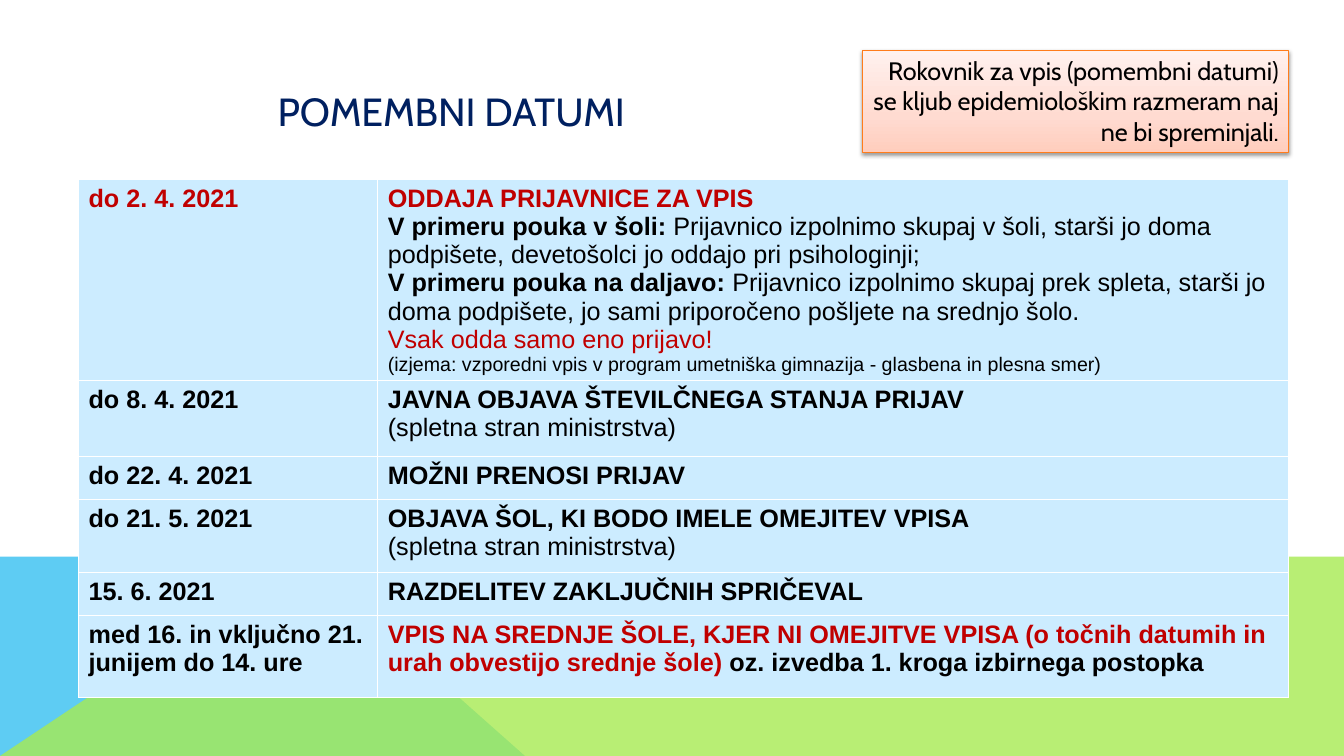
import pptx
import pptx.util
import pptx.dml.color
import pptx.enum.text
import pptx.enum.shapes
import pptx.oxml
import pptx.oxml.ns

Cm, Pt = pptx.util.Cm, pptx.util.Pt

# Content
COLORS = {"blue": "5ECCF3", "green": "A7EA52", "cell": "CCECFF", "white": "FFFFFF",
          "black": "000000", "red": "C00000", "navy": "002060", "orange": "FF7C1B"}
TITLE = "POMEMBNI DATUMI"
NOTICE = ("Rokovnik za vpis (pomembni datumi) se kljub epidemiološkim razmeram "
          "naj ne bi spreminjali.")
NOTICE_STOPS = [(0, "FFCDBD"), (35, "FFDBD1"), (100, "FFF1EE")]

# Text styles: bold, colour, size
STYLES = {"strong": (True, "black", 18), "plain": (False, "black", 18),
          "alert": (True, "red", 18), "remark": (False, "red", 18),
          "small": (False, "black", 14)}

# Each row: height, date paragraphs, event paragraphs; a paragraph is a list of (text, style)
MINISTRY = [("(spletna stran ministrstva)", "plain")]
SCHEDULE = [
    (3.99, [[("do 2. 4. 2021", "alert")]], [
        [("ODDAJA PRIJAVNICE ZA VPIS", "alert")],
        [("V primeru pouka v šoli: ", "strong"),
         ("Prijavnico izpolnimo skupaj v šoli, starši jo doma podpišete, "
          "devetošolci jo oddajo pri psihologinji;", "plain")],
        [("V primeru pouka na daljavo: ", "strong"),
         ("Prijavnico izpolnimo skupaj prek spleta, starši jo doma podpišete, "
          "jo sami priporočeno pošljete na srednjo šolo.", "plain")],
        [("Vsak odda samo eno prijavo!", "remark")],
        [("(izjema: vzporedni vpis v program umetniška gimnazija - "
          "glasbena in plesna smer)", "small")]]),
    (1.91, [[("do 8. 4. 2021", "strong")]],
     [[("JAVNA OBJAVA ŠTEVILČNEGA STANJA PRIJAV", "strong")], MINISTRY]),
    (1.09, [[("do 22. 4. 2021", "strong")]], [[("MOŽNI PRENOSI PRIJAV", "strong")]]),
    (1.83, [[("do 21. 5. 2021", "strong")]],
     [[("OBJAVA ŠOL, KI BODO IMELE OMEJITEV VPISA", "strong")], MINISTRY]),
    (1.09, [[("15. 6. 2021", "strong")]], [[("RAZDELITEV ZAKLJUČNIH SPRIČEVAL", "strong")]]),
    (2.06, [[("med 16. in vključno 21.", "strong")], [("junijem do 14. ure", "strong")]],
     [[("VPIS NA SREDNJE ŠOLE, KJER NI OMEJITVE VPISA (o točnih datumih in urah "
        "obvestijo srednje šole) ", "alert"),
       ("oz. izvedba 1. kroga izbirnega postopka", "strong")]]),
]
COLUMN_WIDTHS = [7.54, 22.96]

WIDTH, HEIGHT = 33.87, 19.05
BAND_TOP = 14.03
BANDS = [("blue", 100, [(0, HEIGHT), (0, BAND_TOP), (7.57, BAND_TOP), (13.23, HEIGHT)]),
         ("green", 80, [(0, HEIGHT), (7.54, BAND_TOP), (WIDTH, BAND_TOP), (WIDTH, HEIGHT)])]


def rgb(name):
    return pptx.dml.color.RGBColor.from_string(COLORS[name])


def add_xml(parent, xml):
    xmlns = pptx.oxml.ns.nsdecls("a")
    parent.append(pptx.oxml.parse_xml(xml.replace(" ", f" {xmlns} ", 1)))


def style_run(run, font, size, color, bold=False):
    run.font.name, run.font.size, run.font.bold = font, Pt(size), bold
    run.font.color.rgb = rgb(color)


def fill_cell(cell, paragraphs):
    frame = cell.text_frame
    for number, pieces in enumerate(paragraphs):
        paragraph = frame.add_paragraph() if number else frame.paragraphs[0]
        for text, style in pieces:
            bold, color, size = STYLES[style]
            run = paragraph.add_run()
            run.text = text
            style_run(run, "Arial", size, color, bold)
    properties = cell._tc.get_or_add_tcPr()
    for side in "LRTB":
        add_xml(properties, f'<a:ln{side} w="12700"><a:solidFill><a:srgbClr val="{COLORS["white"]}"/>'
                            f'</a:solidFill></a:ln{side}>')
    cell.fill.solid()
    cell.fill.fore_color.rgb = rgb("cell")


presentation = pptx.Presentation()
presentation.slide_width, presentation.slide_height = Cm(WIDTH), Cm(HEIGHT)
slide = presentation.slides.add_slide(presentation.slide_layouts[6])
shapes = slide.shapes

# Coloured bands at the foot
for color, opacity, corners in BANDS:
    points = [(Cm(x), Cm(y)) for x, y in corners]
    builder = shapes.build_freeform(*points[0])
    builder.add_line_segments(points[1:], close=True)
    band = builder.convert_to_shape()
    band.shadow.inherit = False
    band.fill.solid()
    band.fill.fore_color.rgb = rgb(color)
    band.line.fill.background()
    if opacity < 100:
        tint = band._element.spPr.find(".//" + pptx.oxml.ns.qn("a:srgbClr"))
        add_xml(tint, f'<a:alpha val="{opacity * 1000}"/>')

# Schedule table
schedule = shapes.add_table(len(SCHEDULE), len(COLUMN_WIDTHS), Cm(1.98), Cm(4.52),
                            Cm(sum(COLUMN_WIDTHS)), Cm(sum(row[0] for row in SCHEDULE))).table
schedule.first_row = schedule.horz_banding = False
for column, width in zip(schedule.columns, COLUMN_WIDTHS):
    column.width = Cm(width)
for row, (height, *cells) in zip(schedule.rows, SCHEDULE):
    row.height = Cm(height)
    for cell, paragraphs in zip(row.cells, cells):
        fill_cell(cell, paragraphs)

# Title
title = shapes.add_textbox(Cm(-1.24), Cm(0.79), Cm(25.22), Cm(3.99)).text_frame
title.word_wrap = True
title.vertical_anchor = pptx.enum.text.MSO_ANCHOR.MIDDLE
title.text = TITLE
title.paragraphs[0].alignment = pptx.enum.text.PP_ALIGN.CENTER
style_run(title.paragraphs[0].runs[0], "Cabin", 28, "navy")

# Notice box with gradient and soft shadow
notice = shapes.add_shape(pptx.enum.shapes.MSO_SHAPE.RECTANGLE,
                          Cm(21.74), Cm(1.27), Cm(10.74), Cm(2.57))
notice.line.color.rgb = rgb("orange")
notice.line.width = Pt(0.75)
notice.fill.gradient()
notice.fill.gradient_angle = 90
stops = notice._element.spPr.find(".//" + pptx.oxml.ns.qn("a:gsLst"))
for stop in list(stops):
    stops.remove(stop)
for position, shade in NOTICE_STOPS:
    add_xml(stops, f'<a:gs pos="{position * 1000}"><a:srgbClr val="{shade}"/></a:gs>')
notice.shadow.inherit = False
add_xml(notice._element.spPr.find(pptx.oxml.ns.qn("a:effectLst")),
        f'<a:outerShdw blurRad="{Pt(3.1)}" dist="{Pt(1.6)}" dir="5400000" rotWithShape="0">'
        f'<a:srgbClr val="{COLORS["black"]}"><a:alpha val="38000"/></a:srgbClr></a:outerShdw>')
message = notice.text_frame
message.word_wrap = True
message.auto_size = pptx.enum.text.MSO_AUTO_SIZE.SHAPE_TO_FIT_TEXT
message.vertical_anchor = pptx.enum.text.MSO_ANCHOR.TOP
message.text = NOTICE
message.paragraphs[0].alignment = pptx.enum.text.PP_ALIGN.RIGHT
style_run(message.paragraphs[0].runs[0], "Cabin", 18, "black")

presentation.save("out.pptx")
